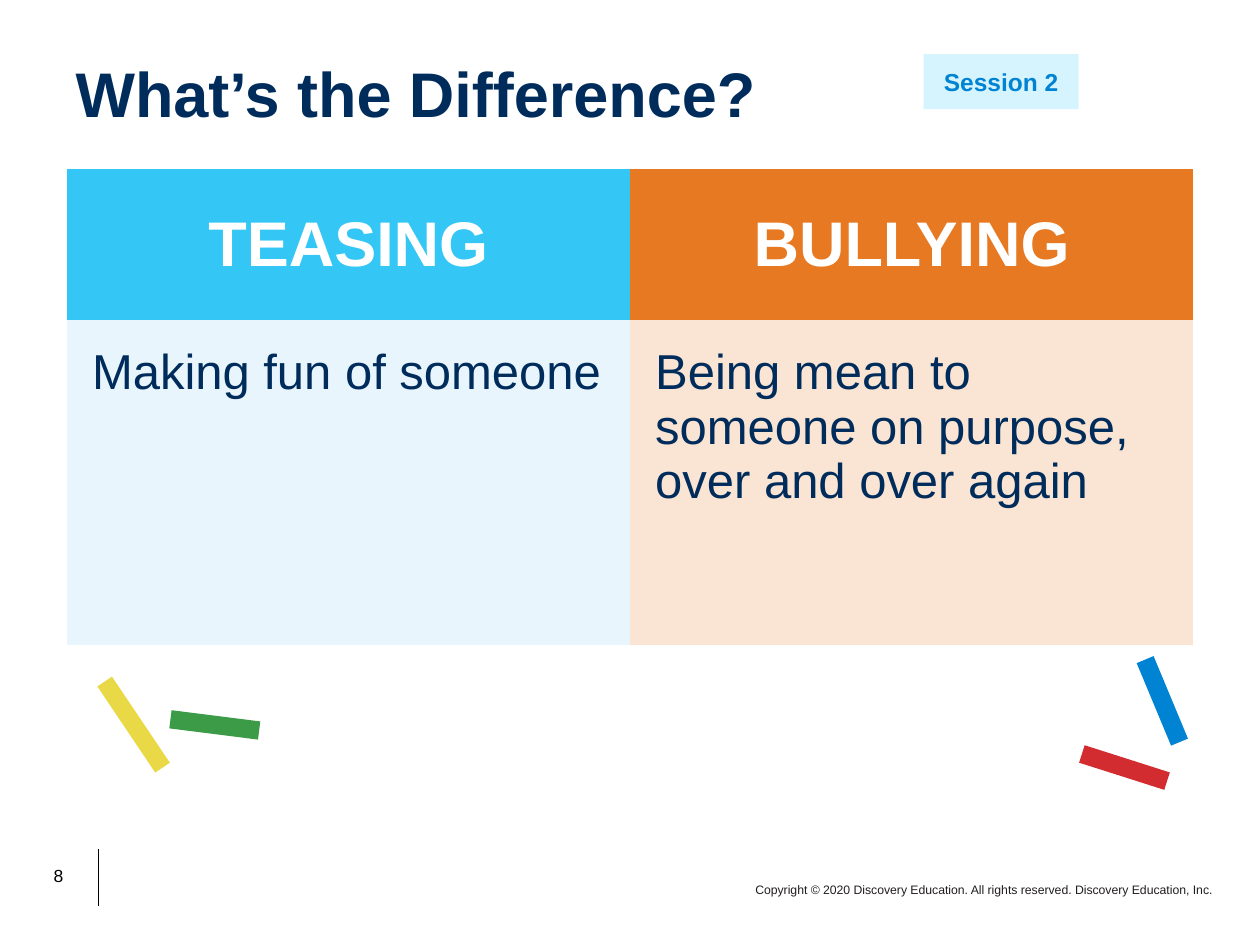
from pptx import Presentation
from pptx.dml.color import RGBColor
from pptx.enum import shapes, text
from pptx.oxml import ns
from pptx.util import Pt
from lxml import etree

FONT = "Arial"
NAVY = RGBColor(0x00, 0x2C, 0x5C)
BLUE = RGBColor(0x00, 0x83, 0xD3)
SKY = RGBColor(0x34, 0xC7, 0xF5)
ORANGE = RGBColor(0xE7, 0x79, 0x22)
PALE_SKY = RGBColor(0xE8, 0xF5, 0xFD)
PALE_ORANGE = RGBColor(0xFA, 0xE4, 0xD3)
PALE_CYAN = RGBColor(0xD6, 0xF4, 0xFD)
GREEN = RGBColor(0x3B, 0x9B, 0x47)
YELLOW = RGBColor(0xE9, 0xD9, 0x46)
RED = RGBColor(0xD3, 0x2C, 0x30)
WHITE = RGBColor(0xFF, 0xFF, 0xFF)
BLACK = RGBColor(0x00, 0x00, 0x00)
INK = RGBColor(0x22, 0x1E, 0x1F)

LEFT, CENTER, RIGHT = text.PP_ALIGN.LEFT, text.PP_ALIGN.CENTER, text.PP_ALIGN.RIGHT
TOP, MIDDLE = text.MSO_ANCHOR.TOP, text.MSO_ANCHOR.MIDDLE
NO_GRID_STYLE = "{2D5ABB26-0587-4C30-8999-92F81FD0307C}"

TITLE = "What’s the Difference?"
SESSION = "Session 2"
PAGE = "8"
COPYRIGHT = ("Copyright © 2020 Discovery Education. All rights reserved. "
             "Discovery Education, Inc.")
# heading, heading fill, meaning, meaning fill
COLUMNS = [
    ("TEASING", SKY, "Making fun of someone", PALE_SKY),
    ("BULLYING", ORANGE, "Being mean to someone on purpose, over and over again",
     PALE_ORANGE),
]
# left, top, width, height, rotation, colour
STICKS = [
    (97.2, 409, 51.1, 10.5, 7.2, GREEN),
    (46.7, 409, 59.3, 10.1, 236.1, YELLOW),
    (638.6, 395.3, 51.1, 10.5, 67.4, BLUE),
    (617, 433.4, 51.1, 10.5, 17.7, RED),
]
COL_W, HEAD_H, BODY_H = 321.84, 86.4, 185.76


def write(tf, content, size, color, bold=False, align=LEFT, spacing=None):
    p = tf.paragraphs[0]
    p.alignment = align
    p.line_spacing = spacing
    r = p.add_run()
    r.text = content
    r.font.name, r.font.size, r.font.bold = FONT, Pt(size), bold
    r.font.color.rgb = color


def set_margins(box, points):
    box.margin_left = box.margin_right = Pt(points)
    box.margin_top = box.margin_bottom = Pt(points)


def add_label(s, content, left, top, width, height, **fmt):
    tf = s.shapes.add_textbox(Pt(left), Pt(top), Pt(width), Pt(height)).text_frame
    tf.word_wrap = True
    write(tf, content, align=RIGHT, **fmt)


def add_block(s, left, top, width, height, color):
    sp = s.shapes.add_shape(shapes.MSO_SHAPE.RECTANGLE,
                            Pt(left), Pt(top), Pt(width), Pt(height))
    sp.shadow.inherit = False
    sp.fill.solid()
    sp.fill.fore_color.rgb = color
    sp.line.fill.background()
    return sp


def fill_cell(cell, content, fill, anchor, **fmt):
    cell.fill.solid()
    cell.fill.fore_color.rgb = fill
    cell.vertical_anchor = anchor
    set_margins(cell, 14.4)
    write(cell.text_frame, content, **fmt)


def add_comparison(s):
    frame = s.shapes.add_table(2, len(COLUMNS), Pt(38.2), Pt(96.5),
                               Pt(COL_W * len(COLUMNS)), Pt(HEAD_H + BODY_H))
    next(frame.element.iter(ns.qn("a:tableStyleId"))).text = NO_GRID_STYLE
    table = frame.table
    table.first_row = table.horz_banding = False
    table.rows[0].height, table.rows[1].height = Pt(HEAD_H), Pt(BODY_H)
    for i, (heading, head_fill, meaning, body_fill) in enumerate(COLUMNS):
        table.columns[i].width = Pt(COL_W)
        fill_cell(table.cell(0, i), heading, head_fill, MIDDLE,
                  size=36, color=WHITE, bold=True, align=CENTER)
        fill_cell(table.cell(1, i), meaning, body_fill, TOP, size=28, color=NAVY)


def add_footer(s):
    rule = s.shapes.add_connector(shapes.MSO_CONNECTOR.STRAIGHT,
                                  Pt(56.2), Pt(485.3), Pt(56.2), Pt(517.7))
    rule.line.color.rgb = BLACK
    rule.line.width = Pt(0.5)
    etree.SubElement(rule.element.spPr, ns.qn("a:effectLst"))
    add_label(s, PAGE, 13.7, 491, 29.5, 19.4, size=10, color=BLACK)
    add_label(s, COPYRIGHT, 365.8, 500.4, 334.1, 15.8, size=7, color=INK)


def main():
    prs = Presentation()
    prs.slide_width, prs.slide_height = Pt(720), Pt(540)
    s = prs.slides.add_slide(prs.slide_layouts[5])

    add_footer(s)

    title = s.shapes.title
    title.left, title.top, title.width, title.height = Pt(36), Pt(28.8), Pt(607.7), Pt(53.3)
    title.text_frame.vertical_anchor = MIDDLE
    write(title.text_frame, TITLE, 36, NAVY, bold=True, spacing=0.9)

    add_comparison(s)

    for *place, rotation, color in STICKS:
        add_block(s, *place, color).rotation = rotation

    badge = add_block(s, 527.8, 31, 88.6, 31.4, PALE_CYAN)
    tf = badge.text_frame
    tf.word_wrap = True
    tf.vertical_anchor = MIDDLE
    set_margins(tf, 7.2)
    write(tf, SESSION, 14, BLUE, bold=True, align=CENTER)

    prs.save("out.pptx")


if __name__ == "__main__":
    main()
